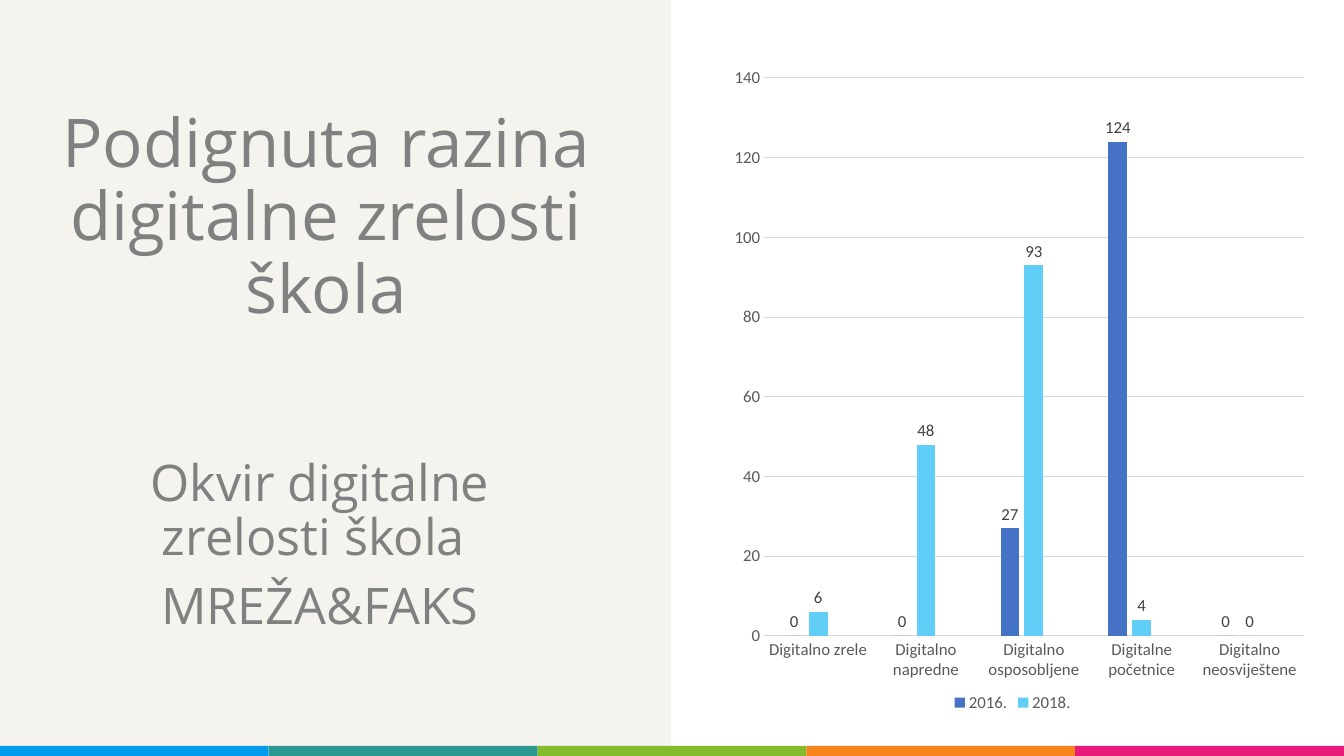
from lxml import etree
from pptx import Presentation
from pptx.chart.data import CategoryChartData
from pptx.dml.color import RGBColor
from pptx.enum.chart import XL_CHART_TYPE, XL_LABEL_POSITION, XL_LEGEND_POSITION, XL_TICK_MARK
from pptx.enum.shapes import MSO_SHAPE
from pptx.enum.text import MSO_ANCHOR, PP_ALIGN
from pptx.oxml import parse_xml
from pptx.util import Inches, Pt

COLUMNS = XL_CHART_TYPE.COLUMN_CLUSTERED
OUTSIDE_END = XL_LABEL_POSITION.OUTSIDE_END
LEGEND_BOTTOM = XL_LEGEND_POSITION.BOTTOM
NO_TICKS = XL_TICK_MARK.NONE
RECTANGLE = MSO_SHAPE.RECTANGLE
TOP, BOTTOM = MSO_ANCHOR.TOP, MSO_ANCHOR.BOTTOM
CENTER = PP_ALIGN.CENTER
CHART_NS = "http://schemas.openxmlformats.org/drawingml/2006/chart"

COLORS = {
    "panel": "F5F3EE", "text": "808080", "axis": "595959", "label": "404040", "grid": "D9D9D9",
    "blue": "009BEA", "teal": "299991", "green": "84BC2E", "orange": "F8851B", "pink": "E71A7A",
    "first": "4472C4", "second": "60CEF6", "third": "A5A5A5",
}
STRIPES = ["blue", "teal", "green", "orange", "pink"]
LEVELS = ["Digitalno zrele", "Digitalno napredne", "Digitalno osposobljene",
          "Digitalne početnice", "Digitalno neosviještene"]
YEARS = [
    ("2016.", [0, 0, 27, 124, 0], "first"),
    ("2018.", [6, 48, 93, 4, 0], "second"),
    ("Series 3", [None] * len(LEVELS), "third"),
]


def rgb(name):
    """Return a palette colour."""
    return RGBColor.from_string(COLORS[name])


def apply(target, formats):
    """Set every attribute named in a dict of format values."""
    for attribute, value in formats.items():
        setattr(target, attribute, value)


class MaturitySlide:
    """Draw on one slide, with lengths in percent of its size."""

    def __init__(self, deck):
        """Add a blank slide to the deck."""
        self.deck = deck
        self.slide = deck.slides.add_slide(deck.slide_layouts[6])
        self.heading_font = "Open Sans"
        self.chart_font = "Calibri"

    def place(self, left, top, width, height):
        """Turn percentages into slide lengths."""
        across, down = self.deck.slide_width / 100, self.deck.slide_height / 100
        return [round(n) for n in (left * across, top * down, width * across, height * down)]

    def style_font(self, font, name, size, color):
        """Set the typeface, size and colour of a font."""
        apply(font, {"name": name, "size": Pt(size)})
        font.color.rgb = rgb(color)

    def block(self, area, color):
        """Add a flat rectangle."""
        block = self.slide.shapes.add_shape(RECTANGLE, *self.place(*area))
        block.shadow.inherit = False
        block.fill.solid()
        block.fill.fore_color.rgb = rgb(color)
        block.line.fill.background()

    def text(self, area, lines, size, anchor, space_before=0):
        """Add centred paragraphs."""
        frame = self.slide.shapes.add_textbox(*self.place(*area)).text_frame
        apply(frame, {"word_wrap": True, "vertical_anchor": anchor, "text": "\n".join(lines)})
        for paragraph in frame.paragraphs:
            apply(paragraph, {"alignment": CENTER, "line_spacing": 0.9,
                              "space_before": Pt(space_before)})
            self.style_font(paragraph.runs[0].font, self.heading_font, size, "text")

    def chart(self, area, categories, series, plot_area):
        """Add a clustered column chart with value labels."""
        data = CategoryChartData()
        data.categories = categories
        for name, values, _ in series:
            data.add_series(name, values)
        chart = self.slide.shapes.add_chart(COLUMNS, *self.place(*area), data).chart
        apply(chart, {"has_title": False, "has_legend": True})
        self.style_font(chart.font, self.chart_font, 12, "axis")
        apply(chart.plots[0], {"gap_width": 219, "overlap": -27, "vary_by_categories": False})
        for columns, (_, _, color) in zip(chart.plots[0].series, series):
            columns.format.fill.solid()
            columns.format.fill.fore_color.rgb = rgb(color)
            apply(columns.data_labels, {"show_value": True, "position": OUTSIDE_END})
            self.style_font(columns.data_labels.font, self.chart_font, 12, "label")
        self.axes(chart)
        self.legend(chart, hidden=2)
        self.plot_layout(chart, plot_area)

    def axes(self, chart):
        """Style both axes and the gridlines."""
        levels, schools = chart.category_axis, chart.value_axis
        for axis in (levels, schools):
            apply(axis, {"major_tick_mark": NO_TICKS, "minor_tick_mark": NO_TICKS})
            self.style_font(axis.tick_labels.font, self.chart_font, 12, "axis")
        apply(schools, {"minimum_scale": 0, "maximum_scale": 140, "major_unit": 20,
                        "has_major_gridlines": True})
        schools.format.line.fill.background()
        for line in (levels.format.line, schools.major_gridlines.format.line):
            line.width = Pt(0.75)
            line.color.rgb = rgb("grid")

    def legend(self, chart, hidden):
        """Put the legend below and drop one entry."""
        legend = chart.legend
        apply(legend, {"position": LEGEND_BOTTOM, "include_in_layout": False})
        self.style_font(legend.font, self.chart_font, 12, "axis")
        entry = parse_xml(f'<c:legendEntry xmlns:c="{CHART_NS}"><c:idx val="{hidden}"/>'
                          '<c:delete val="1"/></c:legendEntry>')
        legend._element.find(f"{{{CHART_NS}}}legendPos").addnext(entry)

    def plot_layout(self, chart, plot_area):
        """Fix the inner plot area as shares of the chart."""
        plot = chart._chartSpace.chart.plotArea
        for previous in plot.findall(f"{{{CHART_NS}}}layout"):
            plot.remove(previous)
        layout = etree.Element(f"{{{CHART_NS}}}layout")
        manual = etree.SubElement(layout, f"{{{CHART_NS}}}manualLayout")
        settings = {"layoutTarget": "inner", "xMode": "edge", "yMode": "edge",
                    **dict(zip("xywh", plot_area))}
        for tag, value in settings.items():
            etree.SubElement(manual, f"{{{CHART_NS}}}{tag}").set("val", str(value))
        plot.insert(0, layout)


def main():
    """Build and save the slide."""
    deck = Presentation()
    apply(deck, {"slide_width": Inches(13.33), "slide_height": Inches(7.5)})
    page = MaturitySlide(deck)
    page.block((0, 0, 49.95, 98.67), "panel")
    stripe_width = 100 / len(STRIPES)
    for column, color in enumerate(STRIPES):
        page.block((column * stripe_width, 98.67, stripe_width, 1.33), color)
    page.text((3.15, 12.4, 42.24, 31.6), ["Podignuta razina digitalne zrelosti škola"], 48, BOTTOM)
    page.text((6.15, 59.87, 35.33, 27.73),
              ["Okvir digitalne zrelosti škola ", "MREŽA&FAKS"], 36, TOP, space_before=10)
    page.chart((52.8, 5.87, 45.1, 88.93), LEVELS, YEARS, (0.09, 0.05, 0.89, 0.83))
    deck.save("out.pptx")


if __name__ == "__main__":
    main()
